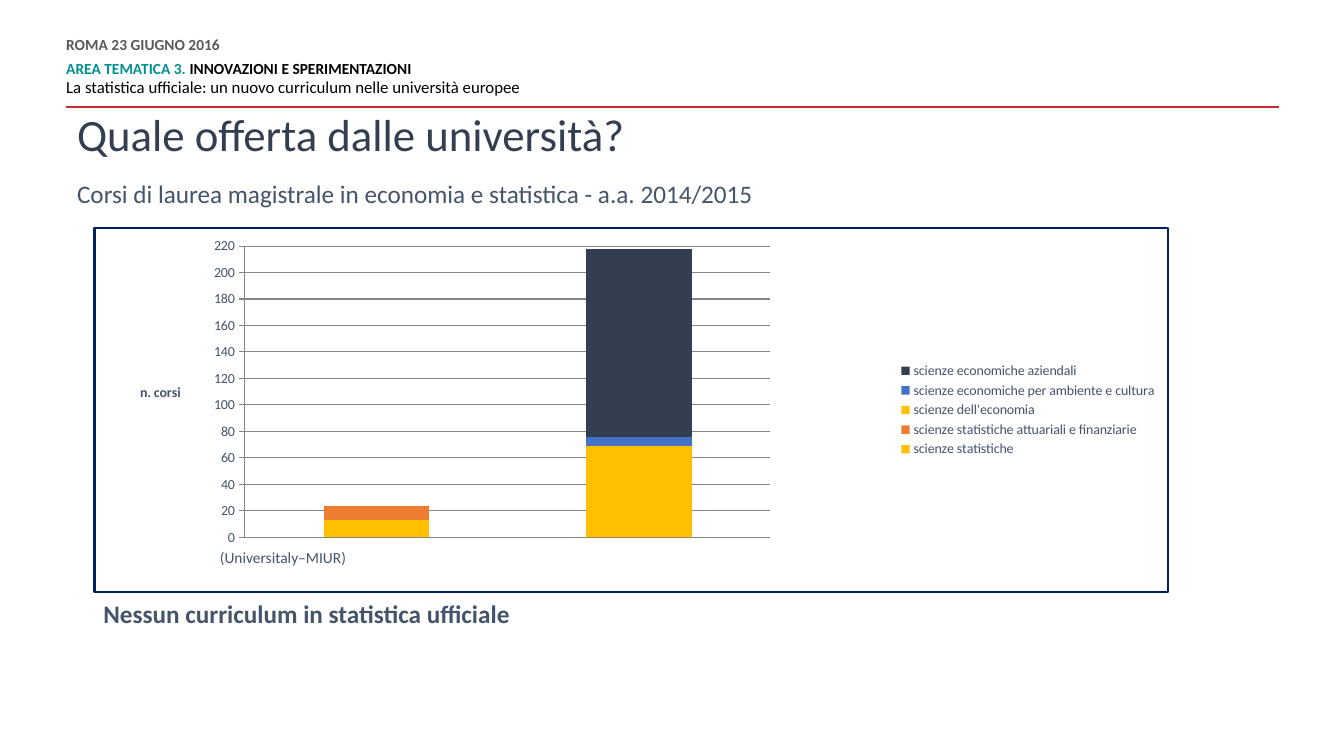
from lxml import etree
from pptx import Presentation
from pptx.chart.data import CategoryChartData
from pptx.dml.color import RGBColor
from pptx.enum.chart import (XL_CHART_TYPE, XL_LEGEND_POSITION as LEGEND,
                             XL_TICK_LABEL_POSITION as LABELS, XL_TICK_MARK as TICK)
from pptx.enum.shapes import MSO_CONNECTOR
from pptx.oxml import parse_xml
from pptx.oxml.ns import nsdecls, qn
from pptx.util import Pt

PX = 9525
FONT = "Calibri"
RED = RGBColor(0xC7, 0x2A, 0x31)
TEAL = RGBColor(0x00, 0x91, 0x90)
BLACK = RGBColor(0x00, 0x00, 0x00)
GRAY = RGBColor(0x59, 0x59, 0x59)
GRID = RGBColor(0x86, 0x86, 0x86)
NAVY = RGBColor(0x33, 0x3F, 0x50)
SLATE = RGBColor(0x44, 0x54, 0x6A)
GOLD = RGBColor(0xFF, 0xC0, 0x00)
ORANGE = RGBColor(0xED, 0x7D, 0x31)
BLUE = RGBColor(0x44, 0x72, 0xC4)

prs = Presentation()
prs.slide_width, prs.slide_height = 1280 * PX, 720 * PX
s = prs.slides.add_slide(prs.slide_layouts[6])


def add_text(box, paragraphs, spacing=None):
    """Each paragraph is a list of runs: (text, size, colour, bold)."""
    tf = s.shapes.add_textbox(*[v * PX for v in box]).text_frame
    tf.word_wrap = True
    for i, runs in enumerate(paragraphs):
        p = tf.paragraphs[0] if i == 0 else tf.add_paragraph()
        p.line_spacing = spacing
        for text, size, color, bold in runs:
            r = p.add_run()
            r.text = text
            r.font.name, r.font.size, r.font.bold = FONT, Pt(size), bold
            r.font.color.rgb = color
    return tf


def set_layout(parent, index, target, **fractions):
    """Give a chart part a fixed place, in fractions of the chart."""
    for old in parent.findall(qn("c:layout")):
        parent.remove(old)
    modes = "".join(f'<c:{k}Mode val="edge"/>' for k in "xy")
    values = "".join(f'<c:{k} val="{v}"/>' for k, v in fractions.items())
    parent.insert(index, parse_xml(
        f'<c:layout {nsdecls("c")}><c:manualLayout>{target}{modes}{values}'
        '</c:manualLayout></c:layout>'))


# Header rule
rule = s.shapes.add_connector(MSO_CONNECTOR.STRAIGHT, 1218 * PX, 102 * PX, 63 * PX, 102 * PX)
rule.line.color.rgb, rule.line.width = RED, Pt(2)
etree.SubElement(rule.element.spPr, qn("a:effectLst"))

# Header text
tf = add_text((63, 37, 801, 57), [
    [("ROMA 23 GIUGNO 2016", 11, GRAY, True)],
    [("AREA TEMATICA 3. ", 11, TEAL, True), ("INNOVAZIONI E SPERIMENTAZIONI", 11, BLACK, True)],
    [("La statistica ufficiale: un nuovo curriculum nelle università europee", 12, BLACK, False)],
], Pt(10.8))
tf.margin_left = tf.margin_top = tf.margin_right = tf.margin_bottom = 0
tf.paragraphs[0].space_after = Pt(6)
tf.paragraphs[2].space_before = Pt(3)

# Title, subtitle and conclusion
add_text((64, 103, 1152, 85), [[("Quale offerta dalle università?", 32, NAVY, False)]], 0.9)
add_text((64, 168, 1152, 475), [[(
    "Corsi di laurea magistrale in economia e statistica - a.a. 2014/2015", 18, SLATE, False)]], 0.9)
add_text((89, 565, 817, 38), [[("Nessun curriculum in statistica ufficiale", 18, SLATE, True)]])

# Stacked column chart
courses = [
    ("scienze statistiche", (13, 0), GOLD),
    ("scienze statistiche attuariali e finanziarie", (11, 0), ORANGE),
    ("scienze dell'economia", (0, 69), GOLD),
    ("scienze economiche per ambiente e cultura", (0, 7), BLUE),
    ("scienze economiche aziendali", (0, 142), NAVY),
]
data = CategoryChartData()
data.categories = ["1", "2"]
for name, values, _ in courses:
    data.add_series(name, values)
chart = s.shapes.add_chart(XL_CHART_TYPE.COLUMN_STACKED, 89 * PX, 216 * PX,
                           1024 * PX, 349 * PX, data).chart
chart.has_title = False
chart.font.name, chart.font.size, chart.font.color.rgb = FONT, Pt(10), SLATE
plot = chart.plots[0]
plot.gap_width, plot.overlap, plot.vary_by_categories = 150, 100, False
for series, (_, _, color) in zip(plot.series, courses):
    series.format.fill.solid()
    series.format.fill.fore_color.rgb = color

# Axes
cat, val = chart.category_axis, chart.value_axis
cat.tick_label_position = LABELS.NONE
cat.major_tick_mark = cat.minor_tick_mark = val.minor_tick_mark = TICK.NONE
val.major_tick_mark = TICK.OUTSIDE
val.minimum_scale, val.maximum_scale, val.major_unit = 0, 220, 20
val.has_major_gridlines = True
for line in (cat.format.line, val.format.line, val.major_gridlines.format.line):
    line.color.rgb, line.width = GRID, Pt(0.75)

# Axis title, upright
tf = val.axis_title.text_frame
r = tf.paragraphs[0].add_run()
r.text = "n. corsi"
r.font.name, r.font.size, r.font.bold = FONT, Pt(10), True
r.font.color.rgb = SLATE
title = val.axis_title.element
body = title.find(".//" + qn("a:bodyPr"))
body.set("rot", "0")
body.set("vert", "horz")
set_layout(title, 1, "", x=0.04, y=0.42)

# Legend, plot area and frame
chart.has_legend = True
chart.legend.position, chart.legend.include_in_layout = LEGEND.RIGHT, False
chart.legend.font.name, chart.legend.font.size = FONT, Pt(10)
chart.legend.font.color.rgb = SLATE
chart_root = chart.element.find(qn("c:chart"))
set_layout(chart_root.find(qn("c:plotArea")), 0, '<c:layoutTarget val="inner"/>',
           x=0.14, y=0.05, w=0.49, h=0.8)
chart_root.addnext(parse_xml(
    f'<c:spPr {nsdecls("c", "a")}><a:noFill/><a:ln w="{Pt(1.5)}"><a:solidFill>'
    '<a:srgbClr val="002060"/></a:solidFill></a:ln></c:spPr>'))

# Data source
add_text((200, 517, 434, 28), [[("(Universitaly–MIUR)", 11, SLATE, False)]])

prs.save("out.pptx")
